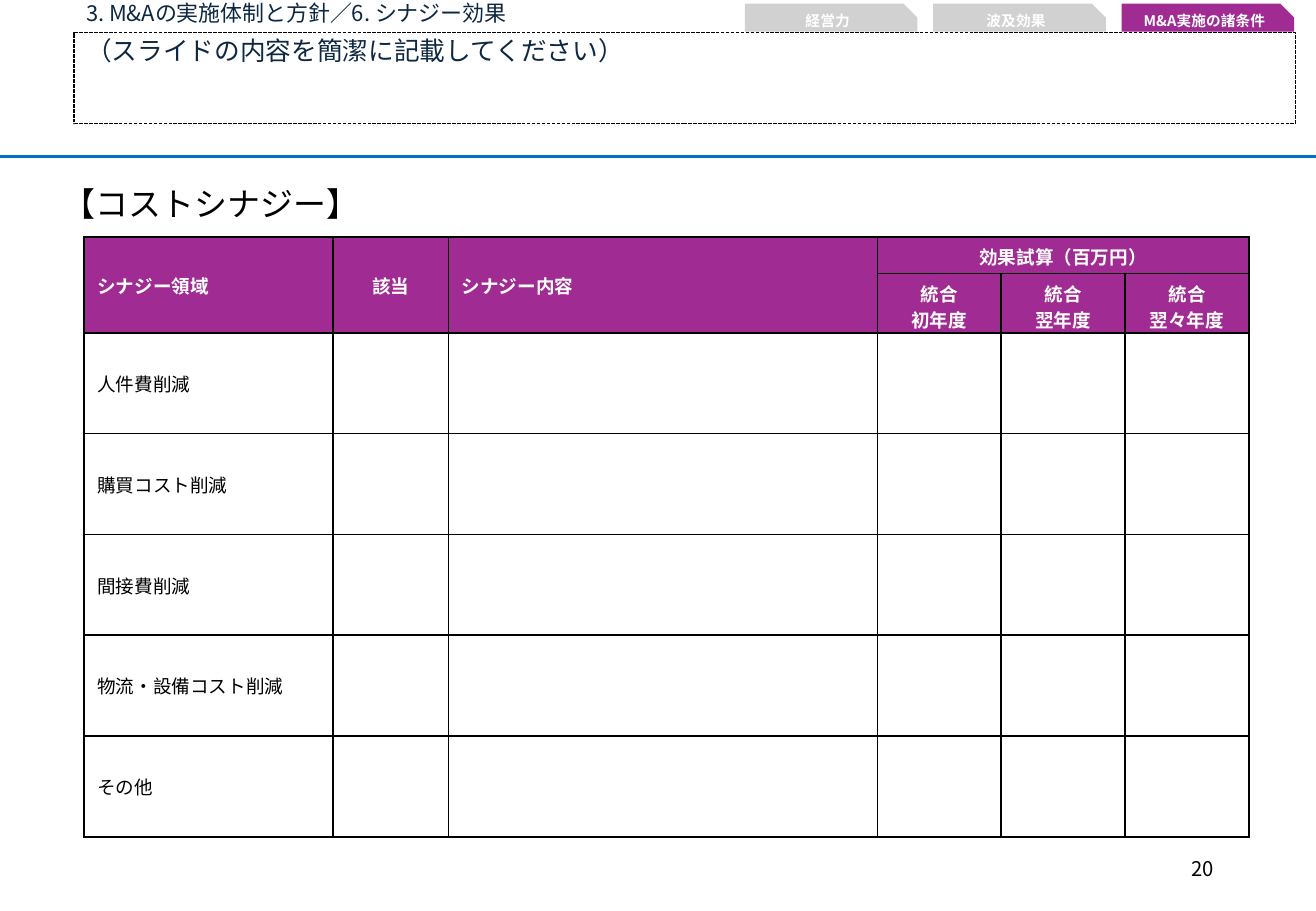
from lxml import etree
from pptx import Presentation
from pptx.dml.color import RGBColor
from pptx.enum import dml, shapes, text
from pptx.oxml import ns
from pptx.util import Inches, Pt

FONT = "Noto Sans CJK JP"
HEX = {"ink": "000000", "navy": "0E2841", "blue": "0070C0",
       "plum": "A02B93", "gray": "D1D1D1", "white": "FFFFFF"}
LEFT, MID, RIGHT = (text.PP_ALIGN.LEFT, text.PP_ALIGN.CENTER,
                    text.PP_ALIGN.RIGHT)
TOP, CENTER = text.MSO_ANCHOR.TOP, text.MSO_ANCHOR.MIDDLE

TABS = [("経営力", "gray"), ("波及効果", "gray"), ("M&A実施の諸条件", "plum")]
COLS = [2.05, 0.95, 3.53, 1.02, 1.02, 1.02]
HEADS = [("シナジー領域", LEFT), ("該当", MID), ("シナジー内容", LEFT)]
YEARS = ["統合\n初年度", "統合\n翌年度", "統合\n翌々年度"]
AREAS = ["人件費削減", "購買コスト削減", "間接費削減", "物流・設備コスト削減", "その他"]


def color(name):
    return RGBColor.from_string(HEX[name])


def sub(node, tag, **attrs):
    return etree.SubElement(node, ns.qn(tag), attrs)


def write(frame, words, size=11, ink="ink", bold=False, align=LEFT,
          anchor=TOP, space=None):
    """Fill a text frame, one paragraph for each line of words."""
    frame.word_wrap = True
    frame.vertical_anchor = anchor
    for i, line in enumerate(words.split("\n")):
        para = frame.add_paragraph() if i else frame.paragraphs[0]
        para.alignment = align
        if space:
            para.line_spacing = space
        run = para.add_run()
        run.text = line
        font = run.font
        font.name, font.size, font.bold = FONT, Pt(size), bold
        font.color.rgb = color(ink)
        sub(run._r.get_or_add_rPr(), "a:ea", typeface=FONT)


def label(slide, box, words, **style):
    area = slide.shapes.add_textbox(*map(Inches, box))
    write(area.text_frame, words, **style)


def block(slide, kind, box, fill=None):
    shape = slide.shapes.add_shape(kind, *map(Inches, box))
    shape.shadow.inherit = False
    if fill:
        shape.fill.solid()
        shape.fill.fore_color.rgb = color(fill)
    else:
        shape.fill.background()
    shape.line.fill.background()
    return shape


def rule(slide, x, y, width):
    line = slide.shapes.add_connector(
        shapes.MSO_CONNECTOR.STRAIGHT, Inches(x), Inches(y),
        Inches(x + width), Inches(y))
    line.line.color.rgb = color("blue")
    line.line.width = Pt(2)
    sub(line._element.spPr, "a:effectLst")


def header(slide, x, y, width):
    """Place the section title above the dashed summary box."""
    style = {"ink": "navy", "space": 0.9}
    label(slide, (x, y, 5.61, 0.3), "3. M&Aの実施体制と方針／6. シナジー効果",
          size=13, **style)
    box = block(slide, shapes.MSO_SHAPE.RECTANGLE, (x, y + 0.3, width, 0.75))
    box.line.color.rgb = color("ink")
    box.line.width = Pt(0.75)
    box.line.dash_style = dml.MSO_LINE.SQUARE_DOT
    write(box.text_frame, "（スライドの内容を簡潔に記載してください）",
          size=15.2, **style)


def tabs(slide, x, y, width, height, step):
    for i, (words, fill) in enumerate(TABS):
        tab = block(slide, shapes.MSO_SHAPE.SNIP_1_RECTANGLE,
                    (x + i * step, y, width, height), fill)
        tab.adjustments[0] = 0.5
        write(tab.text_frame, words, size=8.7, ink="white", bold=True,
              align=MID, anchor=CENTER)


def frame_cell(cell, fill):
    """Set the margins, black borders and fill of a cell."""
    cell.margin_left = cell.margin_right = Inches(0.11)
    cell.margin_top = cell.margin_bottom = Inches(0.05)
    cell.vertical_anchor = CENTER
    props = cell._tc.get_or_add_tcPr()
    for side in ("a:lnL", "a:lnR", "a:lnT", "a:lnB"):
        edge = sub(props, side, w=str(Pt(1)))
        sub(sub(edge, "a:solidFill"), "a:srgbClr", val=HEX["ink"])
    if fill:
        cell.fill.solid()
        cell.fill.fore_color.rgb = color(fill)
    else:
        cell.fill.background()


def synergy(slide, x, y, width, height):
    """Place the cost table: two head rows, then one row for each area."""
    heads = [0.3, 0.49]
    rows = heads + [(height - sum(heads)) / len(AREAS)] * len(AREAS)
    table = slide.shapes.add_table(
        len(rows), len(COLS), *map(Inches, (x, y, width, height))).table
    table.first_row = table.horz_banding = False
    for col, size in zip(table.columns, COLS):
        col.width = Inches(size)
    for i, size in enumerate(rows):
        table.rows[i].height = Inches(size)
        for j in range(len(COLS)):
            frame_cell(table.cell(i, j), "plum" if i < len(heads) else None)

    def fill_in(i, j, words, **style):
        write(table.cell(i, j).text_frame, words, anchor=CENTER, **style)

    bold = {"ink": "white", "bold": True}
    for j, (words, align) in enumerate(HEADS):
        table.cell(0, j).merge(table.cell(1, j))
        fill_in(0, j, words, align=align, **bold)
    first = len(HEADS)
    table.cell(0, first).merge(table.cell(0, len(COLS) - 1))
    fill_in(0, first, "効果試算（百万円）", align=MID, **bold)
    for j, words in enumerate(YEARS, first):
        fill_in(1, j, words, align=MID, **bold)
    for i, words in enumerate(AREAS, len(heads)):
        fill_in(i, 0, words)


def main():
    deck = Presentation()
    deck.slide_width, deck.slide_height = Inches(10.83), Inches(7.5)
    slide = deck.slides.add_slide(deck.slide_layouts[6])
    rule(slide, 0, 1.29, 10.83)
    header(slide, 0.61, -0.03, 10.05)
    synergy(slide, 0.69, 1.95, sum(COLS), 4.94)
    label(slide, (0.42, 1.46, 2.87, 0.43), "【コストシナジー】", size=19.5)
    tabs(slide, 6.13, 0.03, 1.42, 0.23, 1.55)
    label(slide, (7.65, 6.95, 2.44, 0.4), "20", size=12, align=RIGHT,
          anchor=CENTER)
    deck.save("out.pptx")


if __name__ == "__main__":
    main()
